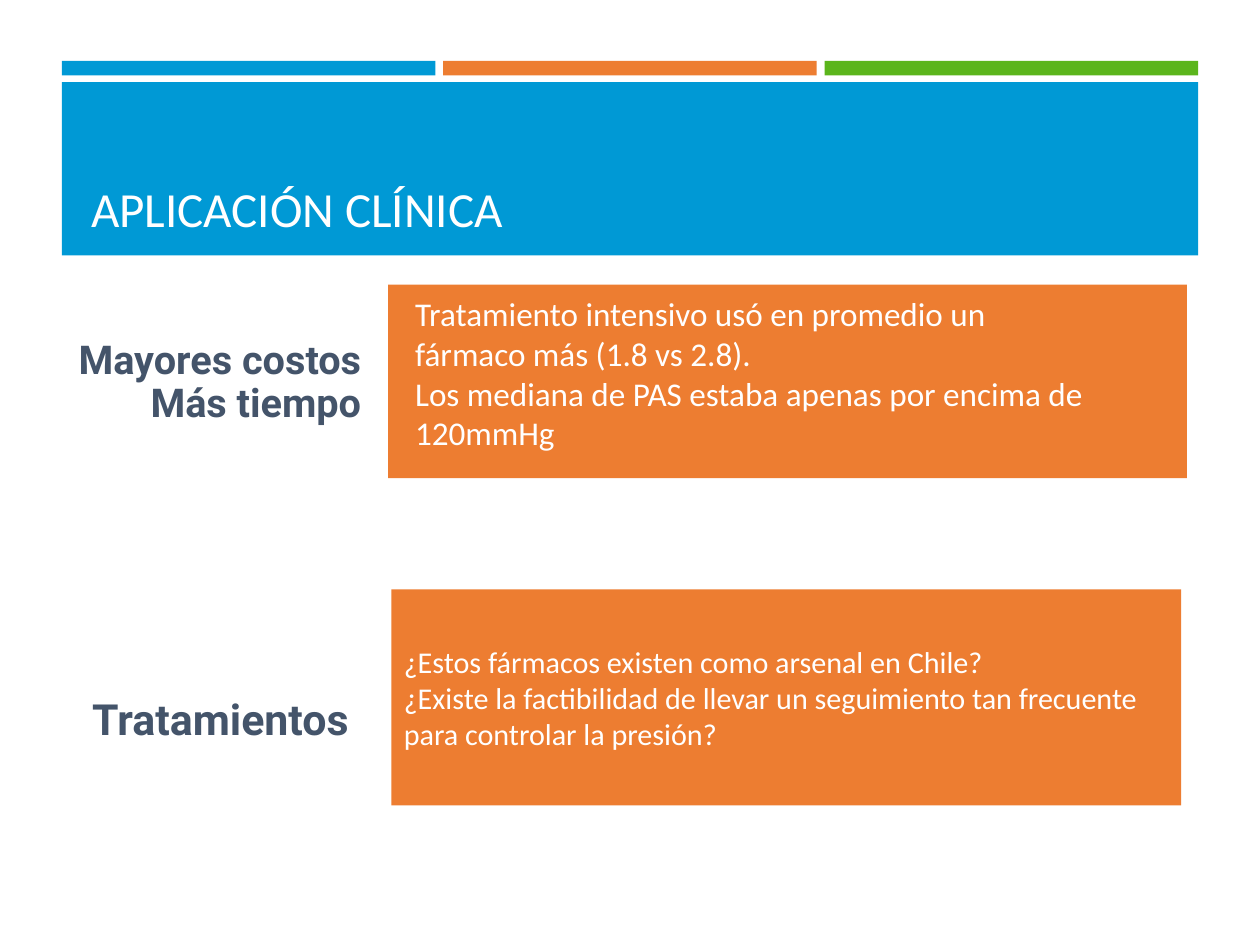
from dataclasses import dataclass

import pptx
import pptx.dml.color
import pptx.enum.shapes
import pptx.enum.text
import pptx.slide
import pptx.util

EMU_PER_PX = 9000  # 40 px to the centimetre
COLORS = {
    "blue": "0099D5",
    "orange": "ED7D31",
    "green": "5BB51C",
    "slate": "44546A",
    "white": "FFFFFF",
}
ALIGN = pptx.enum.text.PP_ALIGN
ANCHOR = pptx.enum.text.MSO_ANCHOR


@dataclass(frozen=True)
class Box:
    left: int
    top: int
    width: int
    height: int


@dataclass(frozen=True)
class TextStyle:
    font: str
    size: float
    color: str
    bold: bool = False
    line_spacing: float = 1.0
    align: ALIGN = ALIGN.LEFT
    anchor: ANCHOR = ANCHOR.MIDDLE
    inset_x: int = 11
    inset_y: int = 6


@dataclass(frozen=True)
class Panel:
    box: Box
    fill: str | None = None
    lines: tuple[str, ...] = ()
    style: TextStyle | None = None


TITLE = TextStyle("Calibri", 30.9, "white", anchor=ANCHOR.BOTTOM, inset_x=10, inset_y=5)
COSTS_LABEL = TextStyle("Roboto", 25, "slate", True, 0.9, ALIGN.RIGHT)
TREATMENTS_LABEL = TextStyle("Roboto", 27, "slate", True, 0.9)
COSTS_BODY = TextStyle("Calibri", 20.85, "white")
TREATMENTS_BODY = TextStyle("Calibri", 19, "white")

STRIPE_LEFT, STRIPE_PITCH = 55, 339
STRIPES = [
    Panel(Box(STRIPE_LEFT + index * STRIPE_PITCH, 54, 332, 13), color)
    for index, color in enumerate(("blue", "orange", "green"))
]
PANELS = STRIPES + [
    Panel(Box(55, 73, 1010, 154), "blue"),
    Panel(Box(71, 84, 978, 132), None, ("APLICACIÓN CLÍNICA",), TITLE),
    Panel(Box(40, 266, 292, 149), None, ("Mayores costos", "Más tiempo"), COSTS_LABEL),
    Panel(Box(345, 253, 710, 172), "orange"),
    Panel(
        Box(358, 256, 629, 151),
        "orange",
        (
            "Tratamiento intensivo usó en promedio un fármaco más (1.8 vs 2.8).",
            "Los mediana de PAS estaba apenas por encima de 120mmHg",
        ),
        COSTS_BODY,
    ),
    Panel(Box(71, 599, 337, 85), None, ("Tratamientos",), TREATMENTS_LABEL),
    Panel(
        Box(348, 524, 702, 192),
        "orange",
        (
            "¿Estos fármacos existen como arsenal en Chile?",
            "¿Existe la factibilidad de llevar un seguimiento tan frecuente "
            "para controlar la presión?",
        ),
        TREATMENTS_BODY,
    ),
]


def px(length: int) -> pptx.util.Emu:
    return pptx.util.Emu(length * EMU_PER_PX)


def rgb(name: str) -> pptx.dml.color.RGBColor:
    return pptx.dml.color.RGBColor.from_string(COLORS[name])


def write_text(frame, lines: tuple[str, ...], style: TextStyle) -> None:
    frame.word_wrap = True
    frame.vertical_anchor = style.anchor
    frame.margin_left = frame.margin_right = px(style.inset_x)
    frame.margin_top = frame.margin_bottom = px(style.inset_y)
    frame.text = "\n".join(lines)
    for paragraph in frame.paragraphs:
        paragraph.alignment = style.align
        paragraph.line_spacing = style.line_spacing
        paragraph.font.name = style.font
        paragraph.font.size = pptx.util.Pt(style.size)
        paragraph.font.bold = style.bold
        paragraph.font.color.rgb = rgb(style.color)


def draw_panel(slide: pptx.slide.Slide, panel: Panel) -> None:
    """Draw a filled rectangle, or a plain text box when there is no fill."""
    box = panel.box
    bounds = (px(box.left), px(box.top), px(box.width), px(box.height))
    if panel.fill:
        shape = slide.shapes.add_shape(
            pptx.enum.shapes.MSO_SHAPE.RECTANGLE, *bounds
        )
        shape.shadow.inherit = False
        shape.fill.solid()
        shape.fill.fore_color.rgb = rgb(panel.fill)
        shape.line.fill.background()
    else:
        shape = slide.shapes.add_textbox(*bounds)
    if panel.style:
        write_text(shape.text_frame, panel.lines, panel.style)


def main() -> None:
    presentation = pptx.Presentation()
    presentation.slide_width = px(1120)
    presentation.slide_height = px(840)
    slide = presentation.slides.add_slide(presentation.slide_layouts[6])
    for panel in PANELS:
        draw_panel(slide, panel)
    presentation.save("out.pptx")


if __name__ == "__main__":
    main()
